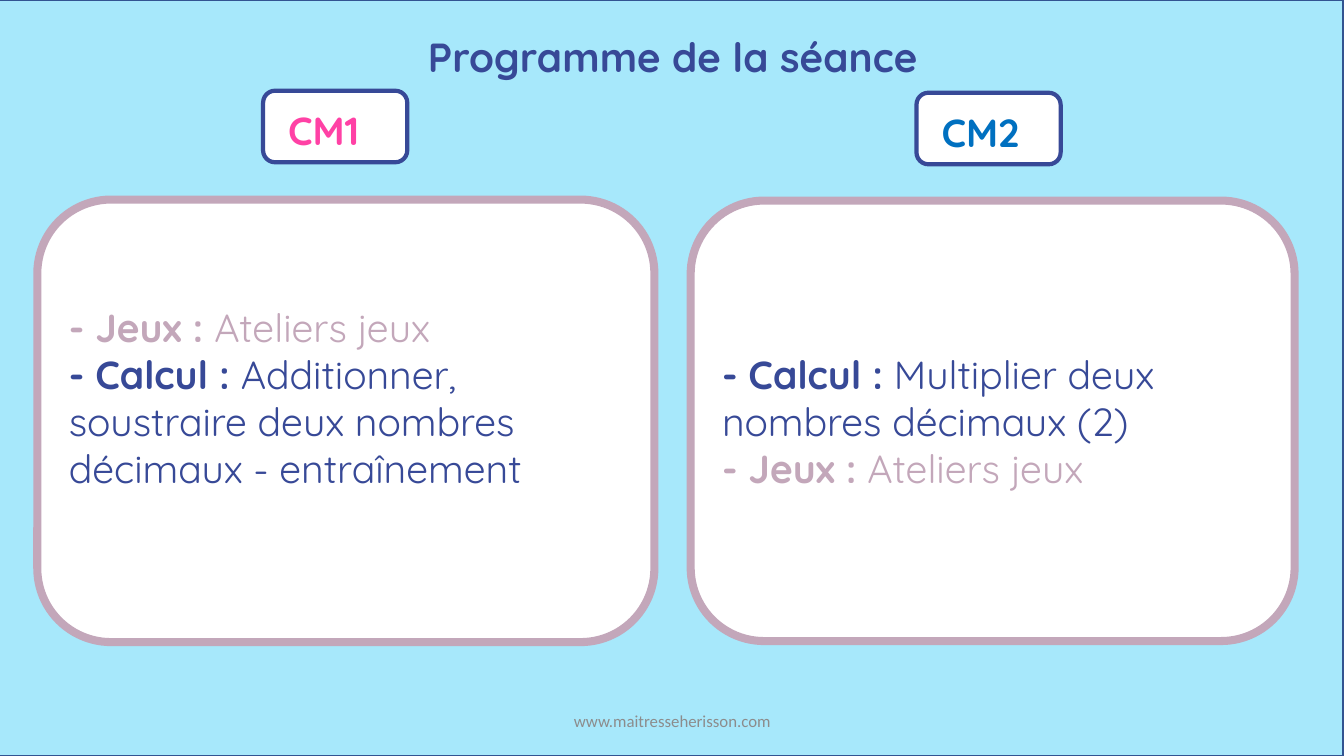
from pptx import Presentation
from pptx.dml.color import RGBColor
from pptx.enum.shapes import MSO_SHAPE as Shape
from pptx.enum.text import MSO_ANCHOR as Anchor, PP_ALIGN as Align
from pptx.util import Inches, Pt

SKY = RGBColor(0xA7, 0xE8, 0xFB)
EDGE = RGBColor(0x32, 0x54, 0x91)
NAVY = RGBColor(0x37, 0x49, 0x97)
MAUVE = RGBColor(0xC3, 0xA7, 0xBA)
PINK = RGBColor(0xFF, 0x41, 0xA5)
BLUE = RGBColor(0x00, 0x70, 0xC0)
GREY = RGBColor(0x8C, 0x8C, 0x8C)
WHITE = RGBColor(0xFF, 0xFF, 0xFF)
GAMES = ("- Jeux : ", "Ateliers jeux", MAUVE)


def style(para, size, color, font="Quicksand", bold=None, align=Align.LEFT):
    """Set the font and alignment of a paragraph."""
    para.alignment = align
    para.font.name = font
    para.font.size = Pt(size)
    para.font.color.rgb = color
    para.font.bold = bold


def add_box(shapes, kind, place, fill, line, width):
    """Add a filled and outlined shape."""
    box = shapes.add_shape(kind, *map(Inches, place))
    box.shadow.inherit = False
    box.fill.solid()
    box.fill.fore_color.rgb = fill
    box.line.color.rgb = line
    box.line.width = Pt(width)
    return box


def add_label(shapes, place, text, size, color, anchor=Anchor.TOP, **look):
    """Add a text box of one line."""
    frame = shapes.add_textbox(*map(Inches, place)).text_frame
    frame.word_wrap = True
    frame.vertical_anchor = anchor
    para = frame.paragraphs[0]
    para.text = text
    style(para, size, color, **look)


def add_tag(slide, left, top, text, color):
    """Add a class name in a grouped rounded frame."""
    shapes = slide.shapes.add_group_shape().shapes
    add_box(shapes, Shape.ROUNDED_RECTANGLE, (left, top, 1.43, 0.71), WHITE, NAVY, 3)
    add_label(shapes, (left + 0.15, top + 0.11, 1.1, 0.57), text, 28, color, bold=True)


def add_panel(slide, place, items, bottom=0.05):
    """Add a rounded panel listing the activities of one class."""
    box = add_box(slide.shapes, Shape.ROUNDED_RECTANGLE, place, WHITE, MAUVE, 5.75)
    frame = box.text_frame
    frame.word_wrap = True
    frame.vertical_anchor = Anchor.MIDDLE
    frame.margin_bottom = Inches(bottom)
    for i, (head, body, color) in enumerate(items):
        para = frame.add_paragraph() if i else frame.paragraphs[0]
        style(para, 28, color)
        for text, bold in ((head, True), (body, False)):
            run = para.add_run()
            run.text = text
            run.font.bold = bold


def main():
    """Build the lesson plan slide."""
    deck = Presentation()
    deck.slide_width, deck.slide_height = Inches(13.33), Inches(7.5)
    slide = deck.slides.add_slide(deck.slide_layouts[6])
    shapes = slide.shapes
    add_box(shapes, Shape.RECTANGLE, (-0.01, 0, 13.33, 7.5), SKY, EDGE, 1)
    add_tag(slide, 2.61, 0.9, "CM1", PINK)
    add_panel(slide, (0.37, 1.98, 6.12, 4.39), [
        GAMES,
        ("- Calcul : ", "Additionner, soustraire deux nombres décimaux - entraînement", NAVY),
    ], bottom=0.52)
    add_panel(slide, (6.85, 1.99, 5.99, 4.37), [
        ("- Calcul : ", "Multiplier deux nombres décimaux (2)", NAVY),
        GAMES,
    ])
    add_label(shapes, (0.01, 0.27, 13.33, 0.59), "Programme de la séance", 29, NAVY,
              bold=True, align=Align.CENTER)
    add_tag(slide, 9.09, 0.92, "CM2", BLUE)
    add_label(shapes, (4.42, 6.95, 4.5, 0.4), "www.maitresseherisson.com", 12, GREY,
              Anchor.MIDDLE, font="Calibri", align=Align.CENTER)
    deck.save("out.pptx")


if __name__ == "__main__":
    main()
